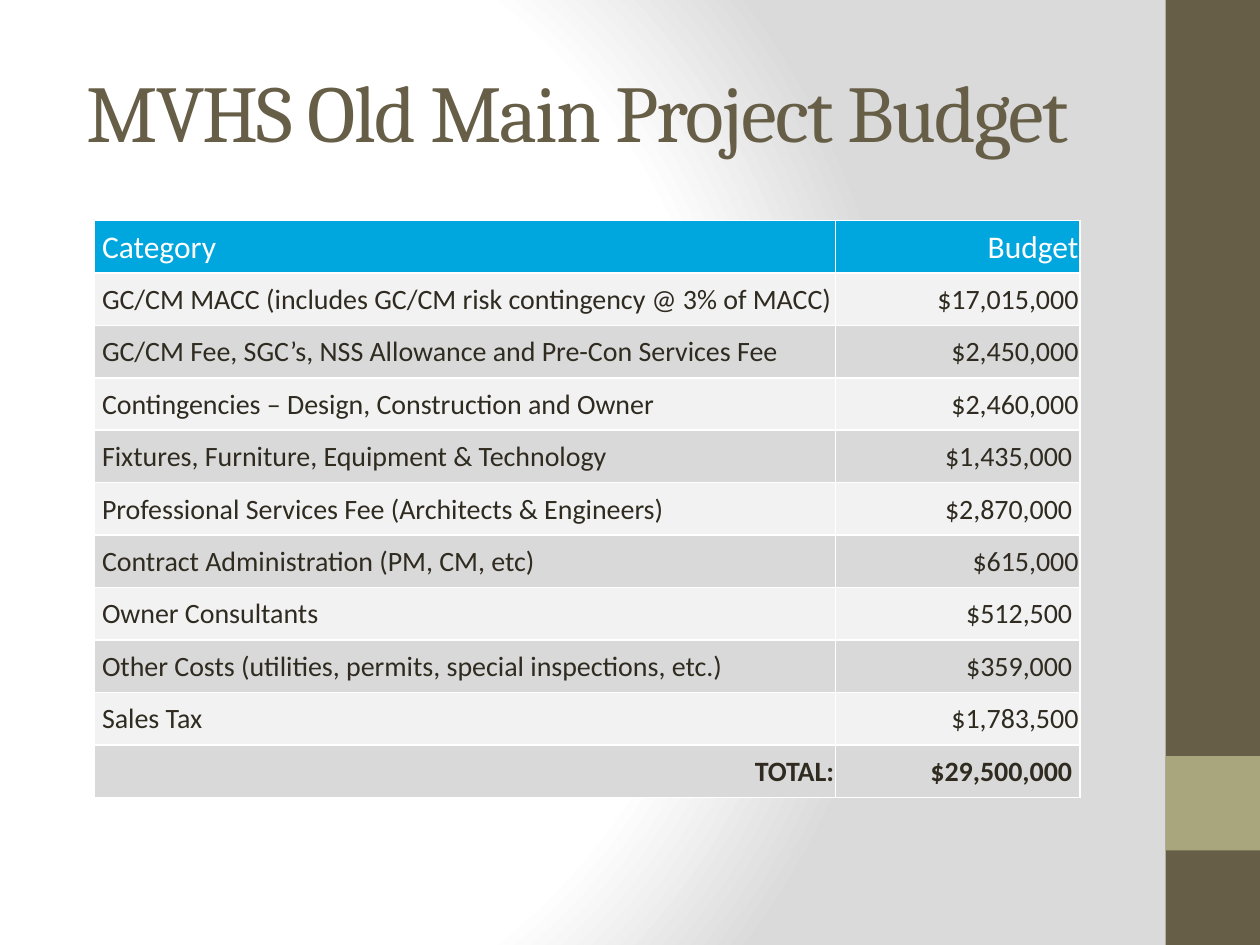
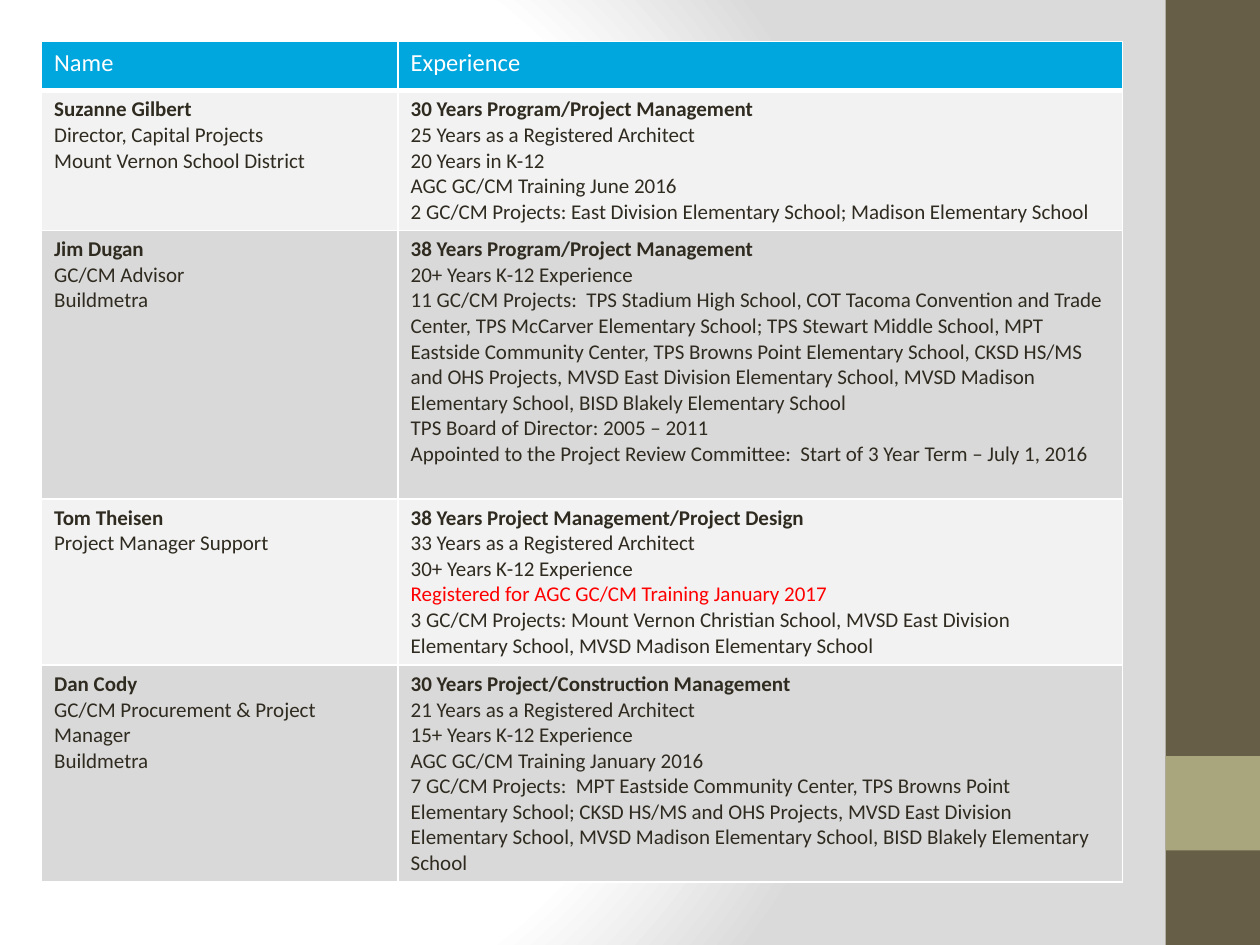
import pptx
import pptx.dml.color
import pptx.enum.shapes
import pptx.enum.text
import pptx.oxml
import pptx.oxml.ns
import pptx.util

Inches = pptx.util.Inches
Pt = pptx.util.Pt
RGBColor = pptx.dml.color.RGBColor
ALIGN = pptx.enum.text.PP_ALIGN
ANCHOR = pptx.enum.text.MSO_ANCHOR

BROWN = RGBColor(0x67, 0x5E, 0x47)
OLIVE = RGBColor(0xA9, 0xA5, 0x7C)
BLUE = RGBColor(0x00, 0xA6, 0xDE)
INK = RGBColor(0x2F, 0x2B, 0x20)
RED = RGBColor(0xFF, 0x00, 0x00)
WHITE = RGBColor(0xFF, 0xFF, 0xFF)
BACKDROP_GREY = RGBColor(0xDA, 0xDA, 0xDA)
ROW_FILLS = [RGBColor(0xD9, 0xD9, 0xD9), RGBColor(0xF2, 0xF2, 0xF2)]

BUDGET = [
    ("GC/CM MACC (includes GC/CM risk contingency @ 3% of MACC)", "$17,015,000"),
    ("GC/CM Fee, SGC’s, NSS Allowance and Pre-Con Services Fee", "$2,450,000"),
    ("Contingencies – Design, Construction and Owner", "$2,460,000"),
    ("Fixtures, Furniture, Equipment & Technology", "$1,435,000"),
    ("Professional Services Fee (Architects & Engineers)", "$2,870,000"),
    ("Contract Administration (PM, CM, etc)", "$615,000"),
    ("Owner Consultants", "$512,500"),
    ("Other Costs (utilities, permits, special inspections, etc.)", "$359,000"),
    ("Sales Tax", "$1,783,500"),
    ("TOTAL:", "$29,500,000"),
]
INDENTED_AMOUNTS = {"$1,435,000", "$2,870,000", "$512,500", "$359,000", "$29,500,000"}

# Row height, then the lines about the person, then the lines of experience
TEAM = [
    (1.11,
     ["Suzanne Gilbert", "Director, Capital Projects", "Mount Vernon School District"],
     ["30 Years Program/Project Management",
      "25 Years as a Registered Architect",
      "20 Years in K-12",
      "AGC GC/CM Training June 2016",
      "2 GC/CM Projects: East Division Elementary School; Madison Elementary School"]),
    (2.13,
     ["Jim Dugan", "GC/CM Advisor", "Buildmetra"],
     ["38 Years Program/Project Management",
      "20+ Years K-12 Experience",
      "11 GC/CM Projects:  TPS Stadium High School, COT Tacoma Convention and Trade "
      "Center, TPS McCarver Elementary School; TPS Stewart Middle School, MPT "
      "Eastside Community Center, TPS Browns Point Elementary School, CKSD HS/MS "
      "and OHS Projects, MVSD East Division Elementary School, MVSD Madison "
      "Elementary School, BISD Blakely Elementary School",
      "TPS Board of Director: 2005 – 2011",
      "Appointed to the Project Review Committee:  Start of 3 Year Term – July 1, 2016"]),
    (1.32,
     ["Tom Theisen", "Project Manager Support"],
     ["38 Years Project Management/Project Design",
      "33 Years as a Registered Architect",
      "30+ Years K-12 Experience",
      "Registered for AGC GC/CM Training January 2017",
      "3 GC/CM Projects: Mount Vernon Christian School, MVSD East Division "
      "Elementary School, MVSD Madison Elementary School"]),
    (1.72,
     ["Dan Cody", "GC/CM Procurement & Project Manager", "Buildmetra"],
     ["30 Years Project/Construction Management",
      "21 Years as a Registered Architect",
      "15+ Years K-12 Experience",
      "AGC GC/CM Training January 2016",
      "7 GC/CM Projects:  MPT Eastside Community Center, TPS Browns Point "
      "Elementary School; CKSD HS/MS and OHS Projects, MVSD East Division "
      "Elementary School, MVSD Madison Elementary School, BISD Blakely Elementary School"]),
]


def write_line(paragraph, text, *, size, color=INK, font="Calibri", bold=False,
               align=ALIGN.LEFT, tracking=0):
    """Add text to a paragraph; tracking is the letter spacing in points."""
    paragraph.alignment = align
    run = paragraph.add_run()
    run.text = text
    run.font.name = font
    run.font.size = Pt(size)
    run.font.bold = bold
    run.font.color.rgb = color
    if tracking:
        run.font._element.set("spc", str(tracking * 100))


def set_borders(cell, **widths):
    """Draw white borders; widths in points override 1 for the sides L, R, T, B."""
    properties = cell._tc.get_or_add_tcPr()
    for side in "LRTB":
        width = Pt(widths.get(side, 1))
        properties.append(pptx.oxml.parse_xml(
            f'<a:ln{side} {pptx.oxml.ns.nsdecls("a")} w="{width}">'
            f'<a:solidFill><a:srgbClr val="{WHITE}"/></a:solidFill></a:ln{side}>'))


class Deck:
    """Holds the presentation, its shared look and the current slide."""

    def __init__(self):
        self.presentation = pptx.Presentation()
        self.presentation.slide_width = Inches(10)
        self.presentation.slide_height = Inches(7.5)
        self.slide = None

    def new_slide(self):
        self.slide = self.presentation.slides.add_slide(self.presentation.slide_layouts[6])
        self.backdrop()
        self.band(0, 7.5, BROWN)
        self.band(6, 0.75, OLIVE)

    def backdrop(self):
        stops = "".join(
            f'<a:gs pos="{position}000"><a:srgbClr val="{color}"/></a:gs>'
            for position, color in [(0, WHITE), (75, WHITE), (100, BACKDROP_GREY)])
        self.slide._element.cSld.insert(0, pptx.oxml.parse_xml(
            f'<p:bg {pptx.oxml.ns.nsdecls("p", "a")}><p:bgPr>'
            f'<a:gradFill rotWithShape="1"><a:gsLst>{stops}</a:gsLst><a:path path="circle">'
            '<a:fillToRect l="20000" t="50000" r="100000" b="50000"/></a:path></a:gradFill>'
            '<a:effectLst/></p:bgPr></p:bg>'))

    def band(self, top, height, color):
        shape = self.slide.shapes.add_shape(
            pptx.enum.shapes.MSO_SHAPE.RECTANGLE,
            Inches(9.25), Inches(top), Inches(0.75), Inches(height))
        shape.shadow.inherit = False
        shape.fill.solid()
        shape.fill.fore_color.rgb = color
        shape.line.fill.background()

    def title(self, text):
        box = self.slide.shapes.add_textbox(
            Inches(0.42), Inches(0.25), Inches(8.33), Inches(1.25))
        frame = box.text_frame
        frame.word_wrap = True
        frame.vertical_anchor = ANCHOR.MIDDLE
        write_line(frame.paragraphs[0], text, size=46, color=BROWN, font="Cambria",
                   align=ALIGN.CENTER, tracking=-1)

    def table(self, left, top, column_widths, row_heights, header_rule=1):
        """Add an empty banded table; header_rule is the line under row 0 in points."""
        frame = self.slide.shapes.add_table(
            len(row_heights), len(column_widths), Inches(left), Inches(top),
            Inches(sum(column_widths)), Inches(sum(row_heights)))
        table = frame.table
        for column, width in zip(table.columns, column_widths):
            column.width = Inches(width)
        for index, (row, height) in enumerate(zip(table.rows, row_heights)):
            row.height = Inches(height)
            rules = {0: {"B": header_rule}, 1: {"T": header_rule}}.get(index, {})
            for cell in row.cells:
                set_borders(cell, **rules)
                cell.fill.solid()
                cell.fill.fore_color.rgb = ROW_FILLS[index % 2] if index else BLUE
        return table

    def cell(self, cell, lines, margins=(0.1, 0.05, 0.1, 0.05), anchor=ANCHOR.TOP,
             bold_first=False, **style):
        """Fill a cell with one paragraph a line; margins are left, top, right, bottom."""
        (cell.margin_left, cell.margin_top,
         cell.margin_right, cell.margin_bottom) = map(Inches, margins)
        cell.vertical_anchor = anchor
        frame = cell.text_frame
        for index, line in enumerate(lines):
            paragraph = frame.add_paragraph() if index else frame.paragraphs[0]
            line_style = dict(style)
            if bold_first:
                line_style["bold"] = index == 0
            if line.startswith("Registered for"):
                line_style["color"] = RED
            write_line(paragraph, line, **line_style)


def budget_slide(deck):
    deck.new_slide()
    deck.title("MVHS Old Main Project Budget")
    rows = [("Category", "Budget")] + BUDGET
    table = deck.table(0.75, 1.75, [5.88, 1.94], [4.58 / len(rows)] * len(rows))
    for index, (category, amount) in enumerate(rows):
        total = category == "TOTAL:"
        style = {"size": 16, "bold": total, "anchor": ANCHOR.MIDDLE}
        if index == 0:
            style.update(size=18, color=WHITE)
        deck.cell(table.cell(index, 0), [category],
                  margins=(0.01 if total else 0.06, 0.01, 0.01, 0),
                  align=ALIGN.RIGHT if total else ALIGN.LEFT, **style)
        deck.cell(table.cell(index, 1), [amount],
                  margins=(0.01, 0.01, 0.06 if amount in INDENTED_AMOUNTS else 0.01, 0),
                  align=ALIGN.RIGHT, **style)


def team_slide(deck):
    deck.new_slide()
    heights = [0.39] + [height for height, _, _ in TEAM]
    table = deck.table(0.33, 0.33, [2.83, 5.75], heights, header_rule=3)
    for column, heading in enumerate(["Name", "Experience"]):
        deck.cell(table.cell(0, column), [heading], size=14, color=WHITE)
    for index, (_, person, experience) in enumerate(TEAM, start=1):
        for column, lines in enumerate([person, experience]):
            deck.cell(table.cell(index, column), lines, size=12, bold_first=True)


def main():
    deck = Deck()
    budget_slide(deck)
    team_slide(deck)
    deck.presentation.save("out.pptx")


if __name__ == "__main__":
    main()
